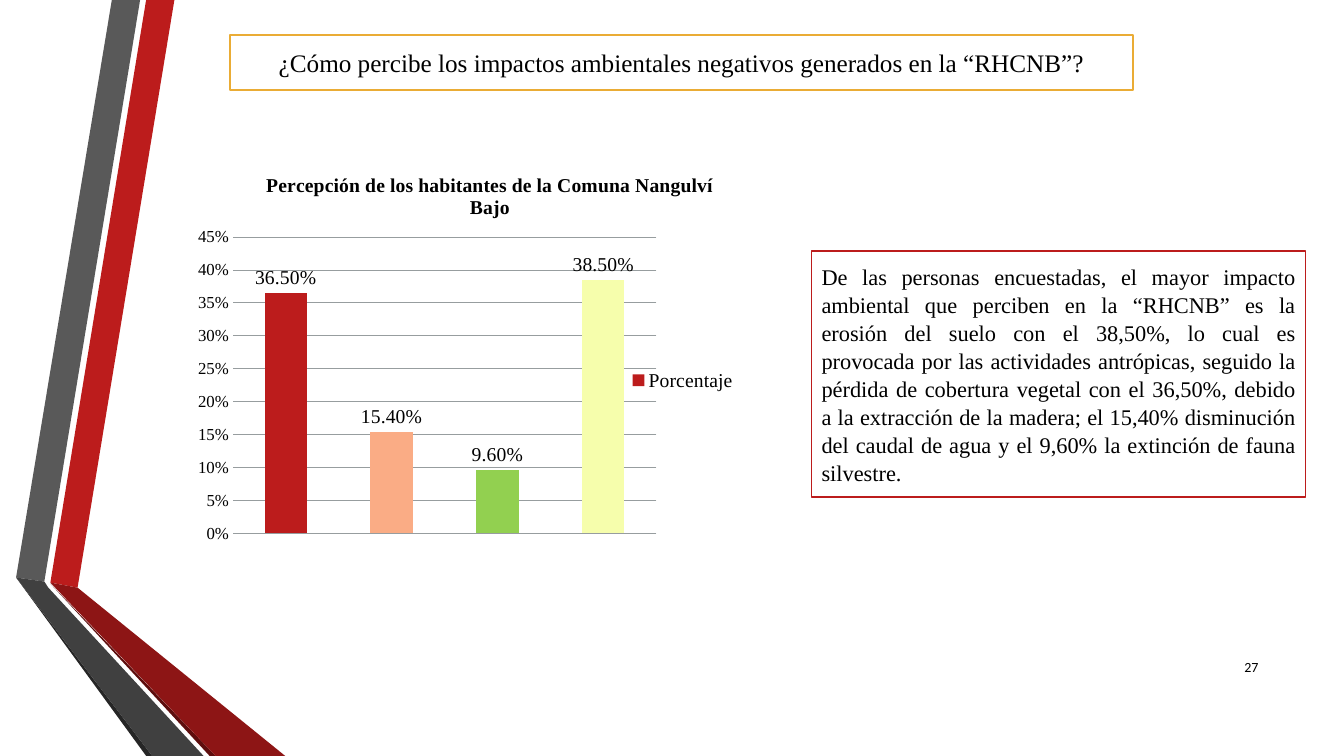
"""Build the survey slide on perceived environmental impacts."""
from dataclasses import dataclass

from lxml import etree
from pptx import Presentation
from pptx.chart.chart import Chart
from pptx.chart.data import CategoryChartData
from pptx.dml.color import RGBColor
from pptx.enum.chart import XL_CHART_TYPE, XL_LABEL_POSITION, XL_LEGEND_POSITION, XL_TICK_MARK
from pptx.enum.shapes import MSO_SHAPE
from pptx.enum.text import MSO_ANCHOR, PP_ALIGN
from pptx.oxml.ns import qn
from pptx.slide import Slide
from pptx.text.text import Font, TextFrame
from pptx.util import Emu, Pt

RECT = MSO_SHAPE.RECTANGLE
COLUMN = XL_CHART_TYPE.COLUMN_CLUSTERED
OUTSIDE = XL_LABEL_POSITION.OUTSIDE_END
RIGHT_KEY = XL_LEGEND_POSITION.RIGHT
NO_TICK = XL_TICK_MARK.NONE
MIDDLE = MSO_ANCHOR.MIDDLE
CENTER, RIGHT, JUSTIFY = PP_ALIGN.CENTER, PP_ALIGN.RIGHT, PP_ALIGN.JUSTIFY
SCALE = 9144


@dataclass(frozen=True)
class Theme:
    serif: str = "Times New Roman"
    sans: str = "Calibri"
    ink: str = "000000"
    paper: str = "FFFFFF"
    red: str = "BC1C1C"
    wine: str = "8D1515"
    maroon: str = "5E0E0E"
    ash: str = "595959"
    coal: str = "404040"
    soot: str = "262626"
    gold: str = "EAAC35"
    grid: str = "979D9F"
    peach: str = "FAAC85"
    green: str = "92D050"
    lemon: str = "F6FEAC"
    head: int = 18
    body: int = 16
    label: int = 14
    axis: int = 12
    small: int = 10
    rule: float = 1.25
    thin: float = 0.75


THEME = Theme()


@dataclass(frozen=True)
class Band:
    color: str
    points: tuple[tuple[int, int], ...]


@dataclass(frozen=True)
class Box:
    left: int
    top: int
    width: int
    height: int
    text: str
    size: int
    align: PP_ALIGN
    line: str
    pitch: float = 1.0


@dataclass(frozen=True)
class Bar:
    name: str
    value: float
    color: str


BANDS = (
    Band(THEME.red, ((50, 578), (77, 583), (173, 0), (145, 0))),
    Band(THEME.ash, ((139, 0), (111, 0), (16, 573), (44, 577))),
    Band(THEME.soot, ((16, 573), (145, 750), (151, 750))),
    Band(THEME.maroon, ((50, 579), (208, 750), (214, 750))),
    Band(THEME.wine, ((50, 578), (214, 750), (283, 750), (77, 583))),
    Band(THEME.coal, ((202, 750), (48, 583), (44, 577), (16, 573), (151, 750))),
)
BOXES = (
    Box(228, 35, 896, 54,
        "¿Cómo percibe los impactos ambientales negativos generados en la “RHCNB”?",
        THEME.head, CENTER, THEME.gold),
    Box(805, 249, 490, 244,
        "De las personas encuestadas, el mayor impacto ambiental que perciben en la “RHCNB” "
        "es la erosión del suelo con el 38,50%, lo cual es provocada por las actividades "
        "antrópicas, seguido la pérdida de cobertura vegetal con el 36,50%, debido a la "
        "extracción de la madera; el 15,40% disminución del caudal de agua y el 9,60% "
        "la extinción de fauna silvestre.",
        THEME.body, JUSTIFY, THEME.red, 1.04),
)
BARS = (
    Bar("1", 0.365, THEME.red),
    Bar("2", 0.154, THEME.peach),
    Bar("3", 0.096, THEME.green),
    Bar("4", 0.385, THEME.lemon),
)
TITLE = ("Percepción de los habitantes de la Comuna Nangulví", "Bajo")


def px(count: int) -> Emu:
    """Turn px into EMU."""
    return Emu(count * SCALE)


def rgb(code: str) -> RGBColor:
    """Read a colour code."""
    return RGBColor.from_string(code)


def style(font: Font, size: int, face: str = THEME.serif, bold: bool = False) -> None:
    """Set face, size, weight and ink."""
    font.name, font.size, font.bold = face, Pt(size), bold
    font.color.rgb = rgb(THEME.ink)


def write(frame: TextFrame, text: str, size: int, align: PP_ALIGN,
          face: str = THEME.serif, pitch: float = 1.0) -> None:
    """Fill a frame with one paragraph."""
    frame.word_wrap = True
    frame.vertical_anchor = MIDDLE
    para = frame.paragraphs[0]
    para.alignment, para.line_spacing = align, pitch
    run = para.add_run()
    run.text = text
    style(run.font, size, face)


def draw_band(slide: Slide, band: Band) -> None:
    """Draw one ribbon piece."""
    first, *rest = band.points
    pen = slide.shapes.build_freeform(*first, scale=float(SCALE))
    pen.add_line_segments(rest, close=True)
    shape = pen.convert_to_shape()
    shape.shadow.inherit = False
    shape.fill.solid()
    shape.fill.fore_color.rgb = rgb(band.color)
    shape.line.fill.background()


def draw_box(slide: Slide, box: Box) -> None:
    """Draw one framed text."""
    shape = slide.shapes.add_shape(
        RECT, px(box.left), px(box.top), px(box.width), px(box.height))
    shape.shadow.inherit = False
    shape.fill.solid()
    shape.fill.fore_color.rgb = rgb(THEME.paper)
    shape.line.color.rgb = rgb(box.line)
    shape.line.width = Pt(THEME.rule)
    write(shape.text_frame, box.text, box.size, box.align, pitch=box.pitch)


def place(part: etree._Element, after: str, **spots: float) -> None:
    """Pin a chart part at fractions of the chart."""
    for old in part.findall(qn("c:layout")):
        part.remove(old)
    layout = etree.Element(qn("c:layout"))
    manual = etree.SubElement(layout, qn("c:manualLayout"))
    if "w" in spots:
        etree.SubElement(manual, qn("c:layoutTarget")).set("val", "inner")
    for key in ("xMode", "yMode"):
        etree.SubElement(manual, qn(f"c:{key}")).set("val", "edge")
    for key, spot in spots.items():
        etree.SubElement(manual, qn(f"c:{key}")).set("val", str(spot))
    prior = part.find(qn(after))
    part.insert(0 if prior is None else part.index(prior) + 1, layout)


def set_title(chart: Chart) -> None:
    """Write the chart title on two lines."""
    chart.has_title = True
    para = chart.chart_title.text_frame.paragraphs[0]
    for order, line in enumerate(TITLE):
        if order:
            para.add_line_break()
        run = para.add_run()
        run.text = line
        style(run.font, THEME.label, bold=True)
    place(chart.chart_title._element, "c:tx", x=0.13, y=0.05)


def set_axes(chart: Chart) -> None:
    """Hide the category axis and format the value axis."""
    chart.category_axis.visible = False
    axis = chart.value_axis
    axis.minimum_scale, axis.maximum_scale, axis.major_unit = 0, 0.45, 0.05
    axis.major_tick_mark = axis.minor_tick_mark = NO_TICK
    axis.format.line.fill.background()
    axis.major_gridlines.format.line.color.rgb = rgb(THEME.grid)
    axis.major_gridlines.format.line.width = Pt(THEME.thin)
    axis.tick_labels.number_format = "0%"
    axis.tick_labels.number_format_is_linked = False
    style(axis.tick_labels.font, THEME.axis)


def set_bars(chart: Chart) -> None:
    """Colour and label the bars."""
    plot = chart.plots[0]
    plot.vary_by_categories, plot.gap_width = False, 150
    series = plot.series[0]
    series.format.fill.solid()
    series.format.fill.fore_color.rgb = rgb(THEME.red)
    for order, bar in enumerate(BARS):
        if bar.color != THEME.red:
            fill = series.points[order].format.fill
            fill.solid()
            fill.fore_color.rgb = rgb(bar.color)
    labels = series.data_labels
    labels.show_value, labels.position = True, OUTSIDE
    labels.number_format, labels.number_format_is_linked = "0.00%", False
    style(labels.font, THEME.label)


def draw_chart(slide: Slide) -> None:
    """Draw the column chart."""
    data = CategoryChartData(number_format="0.00%")
    data.categories = [bar.name for bar in BARS]
    data.add_series("Porcentaje", [bar.value for bar in BARS])
    chart = slide.shapes.add_chart(COLUMN, px(183), px(148), px(600), px(397), data).chart
    style(chart.font, THEME.small, THEME.sans)
    set_title(chart)
    set_axes(chart)
    set_bars(chart)
    chart.has_legend = True
    chart.legend.position, chart.legend.include_in_layout = RIGHT_KEY, False
    style(chart.legend.font, THEME.label)
    place(chart.legend._element, "c:legendPos", x=0.73, y=0.54)
    place(chart._chartSpace.chart.plotArea, "c:none", x=0.08, y=0.22, w=0.7, h=0.74)


def main() -> None:
    """Build and save the slide."""
    deck = Presentation()
    deck.slide_width, deck.slide_height = px(1333), px(750)
    slide = deck.slides.add_slide(deck.slide_layouts[6])
    for band in BANDS:
        draw_band(slide, band)
    page = slide.shapes.add_textbox(px(1198), px(642), px(60), px(40))
    write(page.text_frame, "27", THEME.small, RIGHT, THEME.sans)
    for box in BOXES:
        draw_box(slide, box)
    draw_chart(slide)


    deck.save("out.pptx")


if __name__ == "__main__":
    main()
